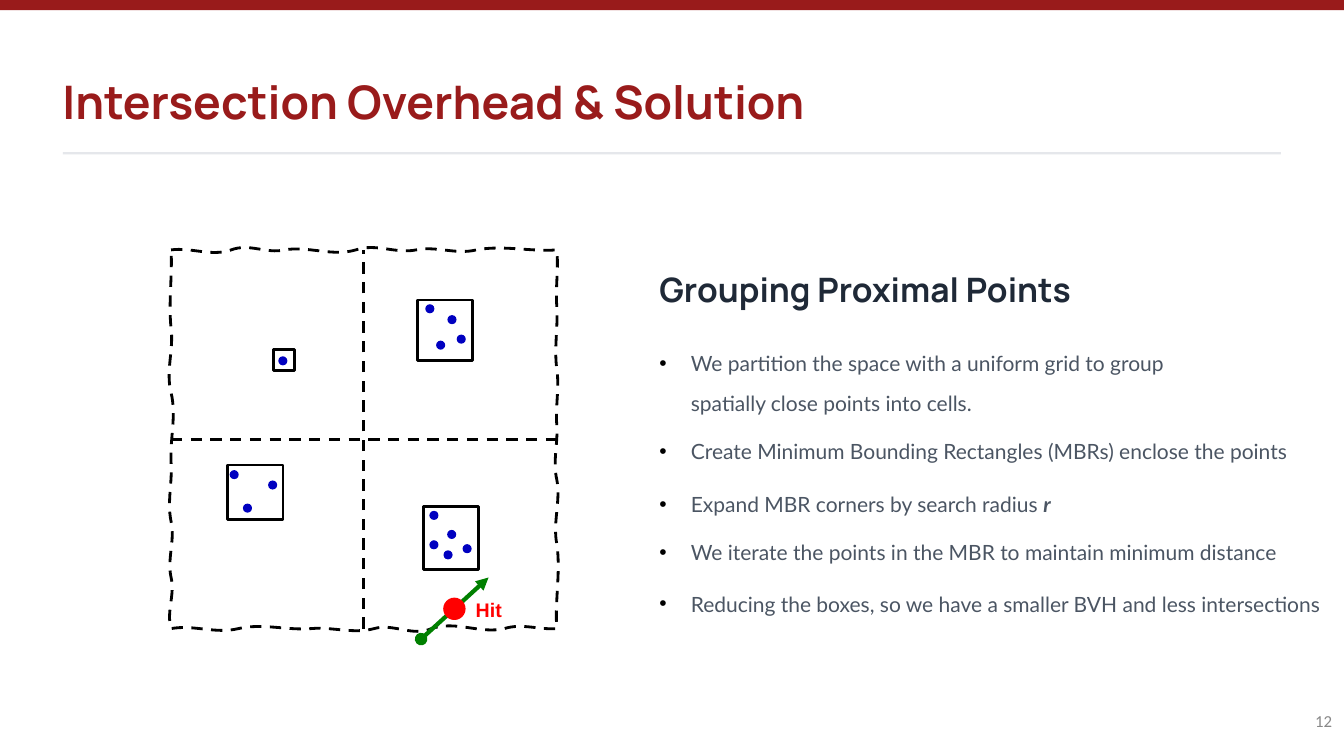
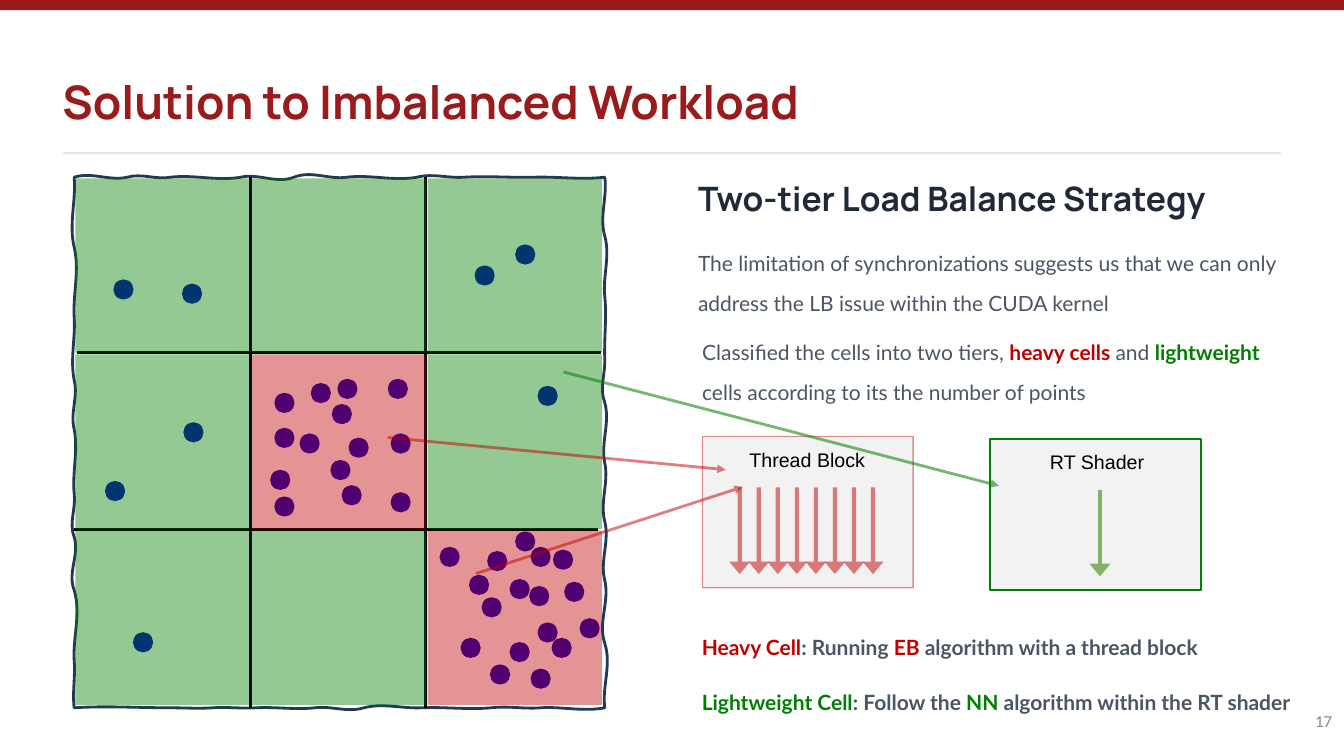
import pptx
import pptx.util
import pptx.dml.color
import pptx.enum.dml
import pptx.enum.shapes
import pptx.enum.text
import pptx.oxml.ns
from lxml import etree

Pt = pptx.util.Pt
KIND = pptx.enum.shapes.MSO_SHAPE
ALIGN = pptx.enum.text.PP_ALIGN
ANCHOR = pptx.enum.text.MSO_ANCHOR

HEX = {
    "brand": "991B1B", "rule": "E5E7EB", "head": "1F2937", "body": "4B5563",
    "page": "888888", "black": "000000", "dot": "0000C0", "green": "008000",
    "hit": "FF0000", "heavy": "C00000", "frame": "233953", "card": "F2F2F2",
    "leaf": "82B366",
}


def color(name):
    return pptx.dml.color.RGBColor.from_string(HEX[name])


def child(parent, tag, **attrs):
    return etree.SubElement(parent, pptx.oxml.ns.qn(tag), attrs)


# Drawing helpers; "on" is the shape collection of a slide or group
def fade(shape, where, alpha):
    for node in shape.element.spPr.xpath(where + "a:solidFill/a:srgbClr"):
        child(node, "a:alpha", val=str(alpha * 1000))


def stroke(shape, ink, width, alpha=100, dash=False):
    shape.line.color.rgb = color(ink)
    shape.line.width = Pt(width)
    if dash:
        shape.line.dash_style = pptx.enum.dml.MSO_LINE.DASH
    if alpha < 100:
        fade(shape, "./a:ln/", alpha)


def paint(shape, fill=None, ink=None, width=1, alpha=100, edge=100, dash=False):
    shape.shadow.inherit = False
    if fill:
        shape.fill.solid()
        shape.fill.fore_color.rgb = color(fill)
        if alpha < 100:
            fade(shape, "./", alpha)
    else:
        shape.fill.background()
    if ink:
        stroke(shape, ink, width, edge, dash)
    else:
        shape.line.fill.background()
    return shape


def block(on, kind, x, y, w, h, **look):
    return paint(on.add_shape(kind, Pt(x), Pt(y), Pt(w), Pt(h)), **look)


def dot(on, x, y, size, fill="dot"):
    block(on, KIND.OVAL, x, y, size, size, fill=fill)


def line(on, x1, y1, x2, y2, ink, width, head=None, tail=None, wide="med", **look):
    link = on.add_connector(pptx.enum.shapes.MSO_CONNECTOR.STRAIGHT,
                            Pt(x1), Pt(y1), Pt(x2), Pt(y2))
    stroke(link, ink, width, **look)
    ln = link.element.spPr.xpath("./a:ln")[0]
    if head:
        child(ln, "a:headEnd", type=head)
    if tail:
        child(ln, "a:tailEnd", type=tail, w=wide)
    child(link.element.spPr, "a:effectLst")


def trim(frame, wrap=True):
    frame.margin_left = frame.margin_right = 0
    frame.margin_top = frame.margin_bottom = 0
    frame.word_wrap = wrap
    frame.vertical_anchor = ANCHOR.TOP


def style(run, face, size, ink, bold=False, italic=False):
    font = run.font
    font.name, font.size, font.bold, font.italic = face, Pt(size), bold, italic
    font.color.rgb = color(ink)


def label(on, x, y, w, h, text, face, size, ink, bold=False, align=ALIGN.LEFT, wrap=True):
    frame = on.add_textbox(Pt(x), Pt(y), Pt(w), Pt(h)).text_frame
    trim(frame, wrap)
    frame.text = text
    para = frame.paragraphs[0]
    para.alignment = align
    style(para.runs[0], face, size, ink, bold)


def prose(on, x, y, w, h, items, bullet=False):
    """Items are (space before, runs); a run is (text, ink, bold, italic)."""
    frame = on.add_textbox(Pt(x), Pt(y), Pt(w), Pt(h)).text_frame
    trim(frame)
    for i, (gap, runs) in enumerate(items):
        para = frame.add_paragraph() if i else frame.paragraphs[0]
        para.line_spacing = 1.6
        if gap:
            para.space_before = Pt(gap)
        if bullet:
            props = para._p.get_or_add_pPr()
            props.set("marL", str(Pt(22.5)))
            props.set("indent", str(-Pt(22.5)))
            child(child(props, "a:buClr"), "a:srgbClr", val=HEX["black"])
            child(props, "a:buFont", typeface="Arial")
            child(props, "a:buChar", char="•")
        for text, *look in runs:
            run = para.add_run()
            run.text = text
            style(run, "Lato", 15, *look)


def wave(on, x, y, w, h, sides, **look):
    """Closed wavy outline. Each side lists (place along it, bend), clockwise."""
    curves = []
    for side, knots in enumerate(sides):
        def spot(at, off):
            return ((at, off), (w + off, at), (at, h + off), (off, at))[side]
        for (a, out), (b, into) in zip(knots, knots[1:]):
            third = (b - a) / 3
            curves.append((spot(a + third, -out), spot(b - third, into), spot(b, 0)))
    build = on.build_freeform(Pt(x), Pt(y), scale=1.0)
    build.add_line_segments([(Pt(x + c[2][0]), Pt(y + c[2][1])) for c in curves], close=True)
    shape = paint(build.convert_to_shape(), **look)
    # Turn each straight segment into a curve
    for step, curve in zip(shape.element.spPr.xpath(".//a:lnTo"), curves):
        bend = etree.Element(pptx.oxml.ns.qn("a:cubicBezTo"))
        for px, py in curve:
            child(bend, "a:pt", x=str(Pt(px)), y=str(Pt(py)))
        step.getparent().replace(step, bend)


# Shared frame
def bands(slide, layout):
    for box, fill in (((0, 0, 960, 7.2), "brand"), ((45, 108.7, 870, 1.5), "rule")):
        band = block(slide.shapes, KIND.RECTANGLE, *box, fill=fill)
        layout.shapes.element.append(band.element)


def start(deck, title, page):
    slide = deck.slides.add_slide(deck.slide_layouts[5])
    head = slide.shapes.title
    head.left, head.top, head.width, head.height = Pt(44.6), Pt(52.5), Pt(914), Pt(40.5)
    frame = head.text_frame
    trim(frame)
    frame.auto_size = pptx.enum.text.MSO_AUTO_SIZE.NONE
    frame.text = title
    frame.paragraphs[0].alignment = ALIGN.LEFT
    style(frame.paragraphs[0].runs[0], "Manrope", 33, "brand", True)
    label(slide.shapes, 790.5, 507.5, 161, 15, page, "Calibri", 12, "page", align=ALIGN.RIGHT)
    return slide


def header(on, x, y, text):
    label(on, x, y, 437, 29, text, "Manrope", 24, "head", True)


# Slide 12: points grouped into bounding rectangles
HULL = [
    [(0, 2), (43, 5), (81, 3), (132, 5), (175, 3), (218, 3.6), (275.5, 1.4)],
    [(0, -1.4), (40, -1), (85, -2), (125, -1), (164, -3), (210, -3), (270.5, -1.5)],
    [(275.5, -1), (238, -4), (186, -6), (145, -4), (100, -1.4), (48, -4), (0, -3)],
    [(270.5, 3.6), (234, 3), (194, 3), (152, 1), (102, 4), (56, 2), (0, 1)],
]
GROUPS = [  # bounding rectangle in the map, dots in the rectangle
    ((73, 71, 15, 15), [(3.6, 5)]),
    ((176, 35.8, 39.6, 43), [(5.6, 3), (21.4, 10.8), (13.3, 29), (28, 24.7)]),
    ((40.3, 153.7, 39.6, 39), [(1.5, 3.6), (11, 27.5), (29, 11)]),
    ((180.2, 183.4, 39.6, 45), [(4.3, 3), (4.3, 24), (28, 26.8), (14.4, 31.2), (17, 16.6)]),
]


def cells(on, x, y, w, h):
    wave(on, x, y, w, h, HULL, ink="black", width=2, dash=True)
    line(on, x, y + h / 2, x + w, y + h / 2, "black", 2, dash=True)
    line(on, x + w / 2, y + h, x + w / 2, y, "black", 2, dash=True)
    for (left, top, wide, high), dots in GROUPS:
        for dx, dy in dots:
            dot(on, x + left + dx, y + top + dy, 6.5)
        block(on, KIND.RECTANGLE, x + left, y + top, wide, high, ink="black", width=2)
    # Ray and hit
    line(on, x + 178.6, y + 278, x + 226.8, y + 234, "green", 3, head="oval", tail="triangle")
    dot(on, x + 194.4, y + 248.4, 16, "hit")
    label(on, x + 217.6, y + 248.6, 19, 17, "Hit", "Arial", 14, "hit", True, wrap=False)


def overhead(deck):
    slide = start(deck, "Intersection Overhead & Solution", "12")
    on = slide.shapes
    cells(on, 122.2, 178.5, 275.5, 270.5)
    header(on, 471, 192, "Grouping Proximal Points")
    prose(on, 471, 239.5, 416, 58, [(0, [(
        "We partition the space with a uniform grid to group spatially close points into cells.",
        "body")])], True)
    prose(on, 471, 302.5, 487, 138, [
        (0, [("Create Minimum Bounding Rectangles (MBRs) enclose the points", "body")]),
        (9, [("Expand MBR corners by search radius ", "body"), ("r", "body", True, True)]),
        (5.3, [("We iterate the points in the MBR to maintain minimum distance", "body")]),
        (8.3, [("Reducing the boxes, so we have a smaller BVH and less intersections", "body")]),
    ], True)
    return slide


# Slide 17: heavy and lightweight cells
EDGE = [
    [(0, 4), (38, 3), (69, 2), (119, 3), (157, 5), (195, 2), (245, 3), (279, 1),
     (329, 0.5), (379, 2)],
    [(0, -2), (42, -4), (85, -1.5), (130, -0.5), (161, -4), (204, -3), (246, -3.6),
     (288, -3.6), (333, -5), (379, -2)],
    [(379, -3), (333, -1), (298, -1.5), (248, -0.7), (207, -3.6), (172, -1.5),
     (130, -0.7), (99, -0.7), (68, 0), (0, -1.5)],
    [(379, 1.4), (345, 1), (295, 5), (257, 4), (226, 1.5), (180, 3), (145, 3),
     (100, 1), (50, 4), (0, 1.5)],
]
POINTS = [
    # Lightweight cells
    (42, 325), (22, 217), (78, 175), (331, 149), (315, 48), (286, 63), (28, 73), (77, 76),
    # Heavy cell in the middle
    (143, 179), (143, 228), (188, 144), (226, 183), (169, 147), (196, 186), (143, 154),
    (184, 162), (183, 202), (191, 220), (224, 144), (140, 209), (161, 183), (226, 225),
    # Heavy cell in the corner
    (325, 292), (326, 264), (295, 267), (282, 284), (291, 300), (261, 264), (341, 329),
    (311, 332), (297, 348), (276, 329), (342, 266), (315, 253), (311, 287), (361, 315),
    (331, 318), (350, 289), (326, 351),
]
HEAVY = {(1, 1), (2, 2)}


def grid(on, x, y, size):
    wave(on, x, y, size, size, EDGE, ink="frame", width=2)
    for left, top in ((2, 125), (0, 251.9)):
        line(on, x + left, y + top, x + left + 374.5, y + top, "black", 2)
    for left in (126.2, 250.8):
        line(on, x + left, y, x + left, y + size, "black", 2)
    for dx, dy in POINTS:
        dot(on, x + dx, y + dy, 14.4)
    for row in range(3):
        for col in range(3):
            fill = "heavy" if (row, col) in HEAVY else "green"
            block(on, KIND.RECTANGLE, x + 0.8 + 125.8 * col, y + 0.8 + 125.8 * row,
                  124.6, 124.6, fill=fill, alpha=42)


def card(slide, x, y, name, lean, ink, width, edge, shafts, shaft, alpha):
    on = slide.shapes.add_group_shape().shapes
    block(on, KIND.RECTANGLE, x, y, 150.5, 108, fill="card", ink=ink, width=width, edge=edge)
    for left in shafts:
        line(on, x + left, y + 36.3, x + left, y + 98.3, shaft, 3, tail="triangle",
             wide="lg", alpha=alpha)
    label(on, x + lean, y + 8, 150.5, 17, name, "Arial", 14, "black", align=ALIGN.CENTER)


def workload(deck):
    slide = start(deck, "Solution to Imbalanced Workload", "17")
    on = slide.shapes
    grid(on, 53, 126.6, 379)
    header(on, 498.6, 127, "Two-tier Load Balance Strategy")
    prose(on, 498.6, 168.1, 416, 58, [(0, [(
        "The limitation of synchronizations suggests us that we can only "
        "address the LB issue within the CUDA kernel", "body")])])
    prose(on, 501.6, 231.6, 416, 58, [(0, [
        ("Classified the cells into two tiers, ", "body"), ("heavy cells ", "heavy", True),
        ("and ", "body"), ("lightweight ", "green", True),
        ("cells according to its the number of points", "body")])])
    # Two ways of running a cell
    card(slide, 501.8, 311.8, "Thread Block", -0.4, "heavy", 1, 42,
         [26.6 + 13.6 * i for i in range(8)], "heavy", 50)
    card(slide, 707.2, 313.4, "RT Shader", 1.2, "green", 1.5, 100, [78.5], "leaf", 100)
    for y, ink, name, verb, short, rest in (
            (442.5, "heavy", "Heavy Cell", ": Running ", "EB", " algorithm with a thread block"),
            (481.8, "green", "Lightweight Cell", ": Follow the ", "NN",
             " algorithm within the RT shader")):
        prose(on, 501.3, y, 441, 29, [(0, [(name, ink, True), (verb, "body", True),
                                           (short, ink, True), (rest, "body", True)])])
    # Arrows from the cells to the cards
    for ends, ink, alpha in (((277, 312.5, 518.4, 335.5), "heavy", 50),
                             ((340, 409.7, 530.6, 347.8), "heavy", 50),
                             ((402.5, 265.7, 713.5, 347), "green", 54)):
        line(on, *ends, ink, 2, tail="triangle", alpha=alpha)


def main():
    deck = pptx.Presentation()
    deck.slide_width, deck.slide_height = Pt(960), Pt(540)
    first = overhead(deck)
    bands(first, deck.slide_layouts[5])
    workload(deck)
    deck.save("out.pptx")


if __name__ == "__main__":
    main()
